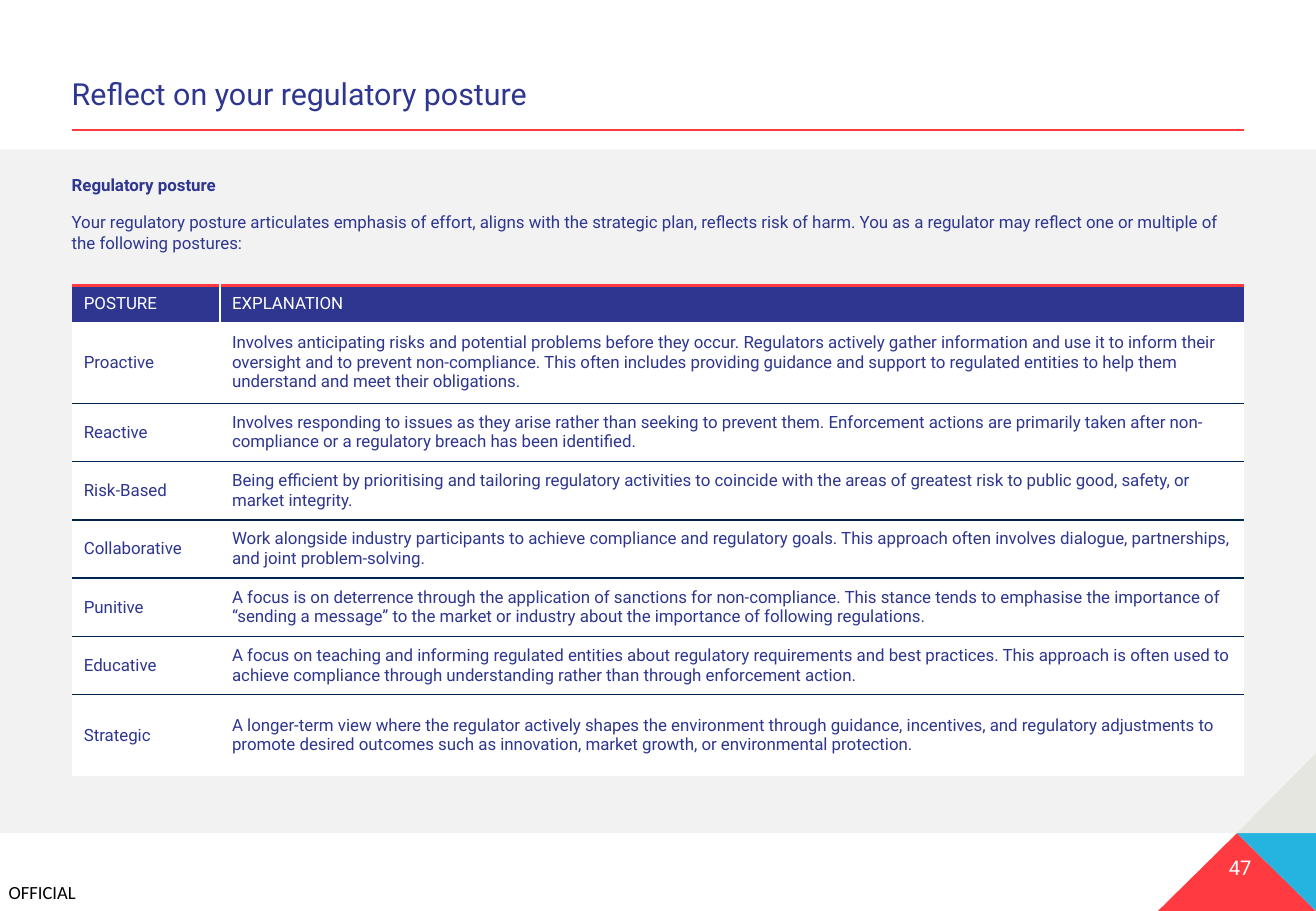
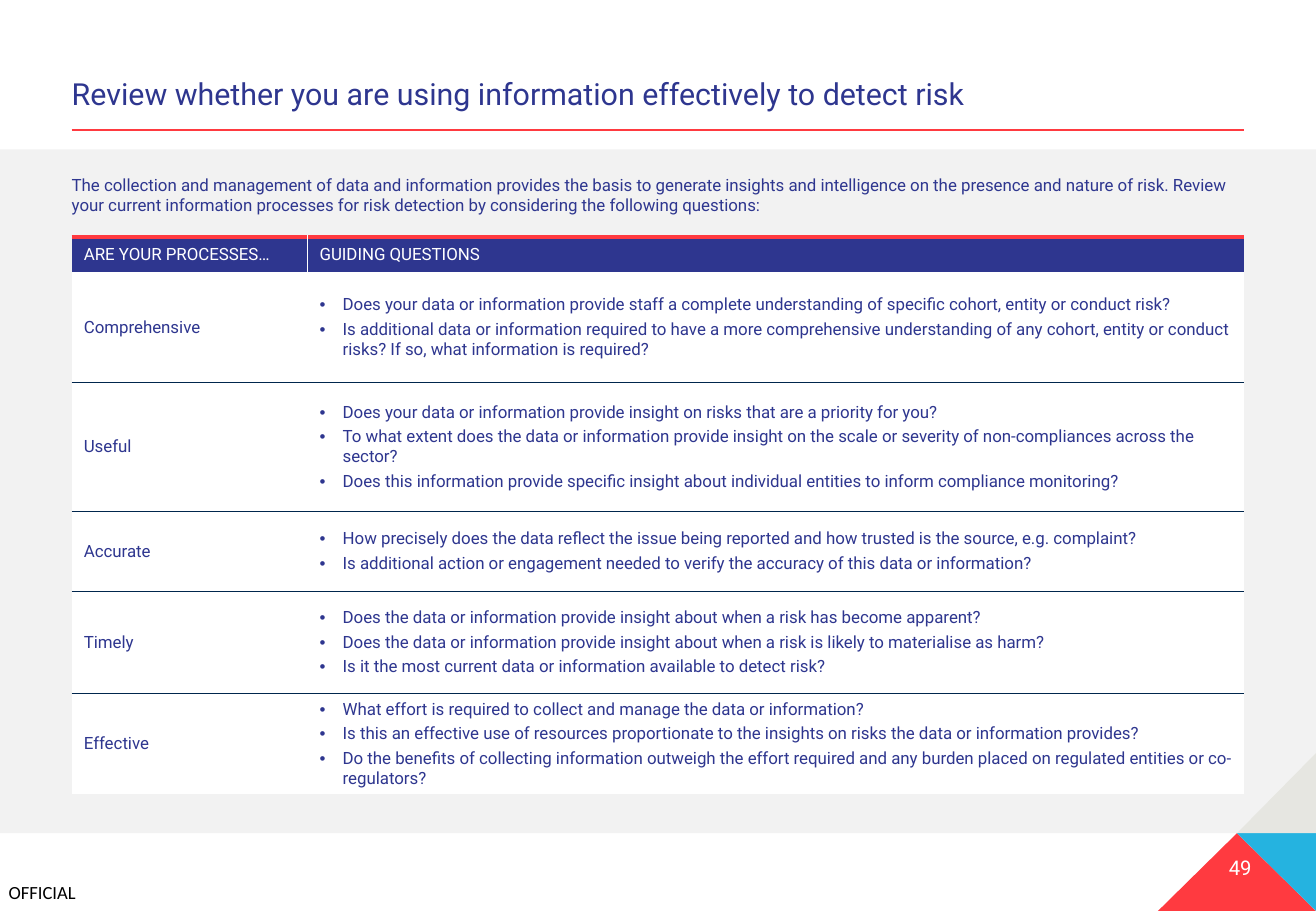
from lxml import etree
from pptx import Presentation
from pptx.dml.color import RGBColor
from pptx.enum.shapes import MSO_CONNECTOR, MSO_SHAPE
from pptx.enum.text import MSO_ANCHOR, PP_ALIGN
from pptx.oxml.ns import qn
from pptx.util import Inches, Pt

TOP, MIDDLE, BOTTOM = MSO_ANCHOR.TOP, MSO_ANCHOR.MIDDLE, MSO_ANCHOR.BOTTOM
LEFT, RIGHT = PP_ALIGN.LEFT, PP_ALIGN.RIGHT
RECTANGLE, STRAIGHT = MSO_SHAPE.RECTANGLE, MSO_CONNECTOR.STRAIGHT

WIDTH, HEIGHT = 10.83, 7.5
MARGIN, CONTENT_W = 0.59, 9.65
BAND_TOP, BAND_BOTTOM = 1.23, 6.86


def rgb(color):
    return RGBColor.from_string(color)


def write(tf, text, size=10, color="2E368F", font="Roboto", bold=False,
          align=LEFT, before=0, after=0, spacing=None, bullet=False):
    """Fill the empty first paragraph of a text frame, or add one more."""
    p = tf.paragraphs[0]
    if p.runs:
        p = tf.add_paragraph()
        p.space_before = Pt(before)
    p.alignment = align
    p.space_after = Pt(after)
    if spacing:
        p.line_spacing = spacing
    if bullet:
        pPr = p._p.get_or_add_pPr()
        pPr.set("marL", str(Inches(0.19)))
        pPr.set("indent", str(-Inches(0.19)))
        etree.SubElement(pPr, qn("a:buFont"), typeface="Arial")
        etree.SubElement(pPr, qn("a:buChar"), char="•")
    r = p.add_run()
    r.text = text
    r.font.size, r.font.name, r.font.bold = Pt(size), font, bold
    r.font.color.rgb = rgb(color)


class Deck:
    NAVY, RED, WHITE, RULE = "2E368F", "FF3A40", "FFFFFF", "00264D"
    GREY, CYAN, STONE = "F2F2F2", "25B3E0", "E6E6E1"

    def __init__(self):
        self.prs = Presentation()
        self.prs.slide_width, self.prs.slide_height = Inches(WIDTH), Inches(HEIGHT)
        self.slide = None

    def add_slide(self, title, number):
        self.slide = self.prs.slides.add_slide(self.prs.slide_layouts[6])
        # Footer label and content band
        write(self.text_box(0.07, 7.25, 0.59, 0.18, pad=0), "OFFICIAL",
              size=11, font="Calibri", color="000000")
        band = self.slide.shapes.add_shape(
            RECTANGLE, 0, Inches(BAND_TOP), Inches(WIDTH), Inches(BAND_BOTTOM - BAND_TOP))
        self.paint(band, self.GREY)
        # Corner triangles with the page number
        apex = (10.18, BAND_BOTTOM)
        corner, edge = (WIDTH, HEIGHT), (WIDTH, BAND_BOTTOM)
        self.polygon(self.RED, apex, (9.53, HEIGHT), corner)
        self.polygon(self.CYAN, apex, corner, edge)
        self.polygon(self.STONE, apex, edge, (WIDTH, 6.2))
        write(self.text_box(9.43, 6.99, 0.87, 0.3), str(number),
              size=12, color=self.WHITE, align=RIGHT)
        # Title and the rule under it
        self.line(MARGIN, 1.07, MARGIN + CONTENT_W, 1.07)
        write(self.text_box(MARGIN, 0.59, CONTENT_W, 0.38, anchor=BOTTOM), title,
              size=18, spacing=0.9)

    def paint(self, sp, color):
        sp.fill.solid()
        sp.fill.fore_color.rgb = rgb(color)
        sp.line.fill.background()
        sp.shadow.inherit = False

    def polygon(self, color, start, *others):
        builder = self.slide.shapes.build_freeform(*map(Inches, start))
        builder.add_line_segments([tuple(map(Inches, pt)) for pt in others], close=True)
        self.paint(builder.convert_to_shape(), color)

    def line(self, x1, y1, x2, y2):
        cn = self.slide.shapes.add_connector(STRAIGHT, *map(Inches, (x1, y1, x2, y2)))
        cn.line.color.rgb = rgb(self.RED)
        cn.line.width = Pt(1.25)
        etree.SubElement(cn._element.spPr, qn("a:effectLst"))

    def text_box(self, x, y, w, h, pad=0.05, anchor=TOP):
        tf = self.slide.shapes.add_textbox(*map(Inches, (x, y, w, h))).text_frame
        tf.word_wrap = True
        tf.vertical_anchor = anchor
        tf.margin_left = tf.margin_right = 0
        tf.margin_top = tf.margin_bottom = Inches(pad)
        return tf

    def borders(self, cell, **sides):
        """Draw the sides given as (colour, points); clear the others."""
        tcPr = cell._tc.get_or_add_tcPr()
        for side in "LRTB":
            color, width = sides.get(side) or (None, 0)
            ln = etree.SubElement(tcPr, qn("a:ln" + side), w=str(Pt(width)))
            if color:
                fill = etree.SubElement(ln, qn("a:solidFill"))
                etree.SubElement(fill, qn("a:srgbClr"), val=color)
            else:
                etree.SubElement(ln, qn("a:noFill"))

    def cell(self, cell, fill, opacity=100):
        cell.vertical_anchor = MIDDLE
        cell.margin_left = cell.margin_right = Inches(0.1)
        cell.margin_top = cell.margin_bottom = Inches(0.04)
        cell.fill.solid()
        cell.fill.fore_color.rgb = rgb(fill)
        if opacity < 100:
            color = cell._tc.tcPr.find(".//" + qn("a:srgbClr"))
            etree.SubElement(color, qn("a:alpha"), val=str(opacity * 1000))

    def table(self, y, first_col, heights, header, rows):
        """Each row is a label and either a sentence or a list of bullets."""
        tbl = self.slide.shapes.add_table(
            len(heights), 2, Inches(MARGIN), Inches(y),
            Inches(CONTENT_W), Inches(sum(heights))).table
        tbl.first_row = tbl.horz_banding = False
        for col, w in zip(tbl.columns, (first_col, CONTENT_W - first_col)):
            col.width = Inches(w)
        for row, h in zip(tbl.rows, heights):
            row.height = Inches(h)
        # Header row
        divider = (self.WHITE, 1)
        for c, text in enumerate(header):
            cell = tbl.cell(0, c)
            self.borders(cell, T=(self.RED, 2.25), **{"LR"[1 - c]: divider})
            self.cell(cell, self.NAVY)
            write(cell.text_frame, text, color=self.WHITE)
        # Body rows, ruled only between one another
        rule = (self.RULE, 1)
        for i, row in enumerate(rows, 1):
            for c, content in enumerate(row):
                cell = tbl.cell(i, c)
                self.borders(cell, T=rule if i > 1 else None,
                             B=rule if i < len(rows) else None)
                self.cell(cell, self.WHITE, opacity=70 if c else 100)
                if isinstance(content, str):
                    write(cell.text_frame, content)
                else:
                    for item in content:
                        write(cell.text_frame, item, after=3, bullet=True)


POSTURES = [
    ("Proactive", "Involves anticipating risks and potential problems before they occur. "
     "Regulators actively gather information and use it to inform their oversight and to "
     "prevent non-compliance. This often includes providing guidance and support to "
     "regulated entities to help them understand and meet their obligations."),
    ("Reactive", "Involves responding to issues as they arise rather than seeking to prevent "
     "them. Enforcement actions are primarily taken after non-compliance or a regulatory "
     "breach has been identified."),
    ("Risk-Based", "Being efficient by prioritising and tailoring regulatory activities to "
     "coincide with the areas of greatest risk to public good, safety, or market integrity."),
    ("Collaborative", "Work alongside industry participants to achieve compliance and "
     "regulatory goals. This approach often involves dialogue, partnerships, and joint "
     "problem-solving."),
    ("Punitive", "A focus is on deterrence through the application of sanctions for "
     "non-compliance. This stance tends to emphasise the importance of “sending a message” "
     "to the market or industry about the importance of following regulations."),
    ("Educative", "A focus on teaching and informing regulated entities about regulatory "
     "requirements and best practices. This approach is often used to achieve compliance "
     "through understanding rather than through enforcement action."),
    ("Strategic", "A longer-term view where the regulator actively shapes the environment "
     "through guidance, incentives, and regulatory adjustments to promote desired outcomes "
     "such as innovation, market growth, or environmental protection."),
]

QUESTIONS = [
    ("Comprehensive", [
        "Does your data or information provide staff a complete understanding of specific "
        "cohort, entity or conduct risk?",
        "Is additional data or information required to have a more comprehensive "
        "understanding of any cohort, entity or conduct risks? If so, what information is "
        "required?"]),
    ("Useful", [
        "Does your data or information provide insight on risks that are a priority for you?",
        "To what extent does the data or information provide insight on the scale or "
        "severity of non-compliances across the sector?",
        "Does this information provide specific insight about individual entities to inform "
        "compliance monitoring?"]),
    ("Accurate", [
        "How precisely does the data reflect the issue being reported and how trusted is the "
        "source, e.g. complaint?",
        "Is additional action or engagement needed to verify the accuracy of this data or "
        "information?"]),
    ("Timely", [
        "Does the data or information provide insight about when a risk has become apparent?",
        "Does the data or information provide insight about when a risk is likely to "
        "materialise as harm?",
        "Is it the most current data or information available to detect risk?"]),
    ("Effective", [
        "What effort is required to collect and manage the data or information?",
        "Is this an effective use of resources proportionate to the insights on risks the "
        "data or information provides?",
        "Do the benefits of collecting information outweigh the effort required and any "
        "burden placed on regulated entities or co-regulators?"]),
]


def main():
    deck = Deck()

    # Regulatory posture
    deck.add_slide("Reflect on your regulatory posture", 47)
    tf = deck.text_box(MARGIN, 1.39, CONTENT_W, 0.86)
    write(tf, "Regulatory posture", bold=True, after=6)
    write(tf, "Your regulatory posture articulates emphasis of effort, aligns with the "
          "strategic plan, reflects risk of harm. You as a regulator may reflect one or "
          "multiple of the following postures:", before=4, after=6)
    deck.table(2.35, 1.22, [0.3, 0.67] + [0.48] * 5 + [0.67],
               ("POSTURE", "EXPLANATION"), POSTURES)

    # Information for risk detection
    deck.add_slide("Review whether you are using information effectively to detect risk", 49)
    tf = deck.text_box(MARGIN, 1.39, CONTENT_W, 0.44)
    write(tf, "The collection and management of data and information provides the basis to "
          "generate insights and intelligence on the presence and nature of risk. Review "
          "your current information processes for risk detection by considering the "
          "following questions:", after=3)
    deck.table(1.95, 1.94, [0.29, 0.91, 1.06, 0.66, 0.84, 0.81],
               ("ARE YOUR PROCESSES…", "GUIDING QUESTIONS"), QUESTIONS)

    deck.prs.save("out.pptx")


if __name__ == "__main__":
    main()
